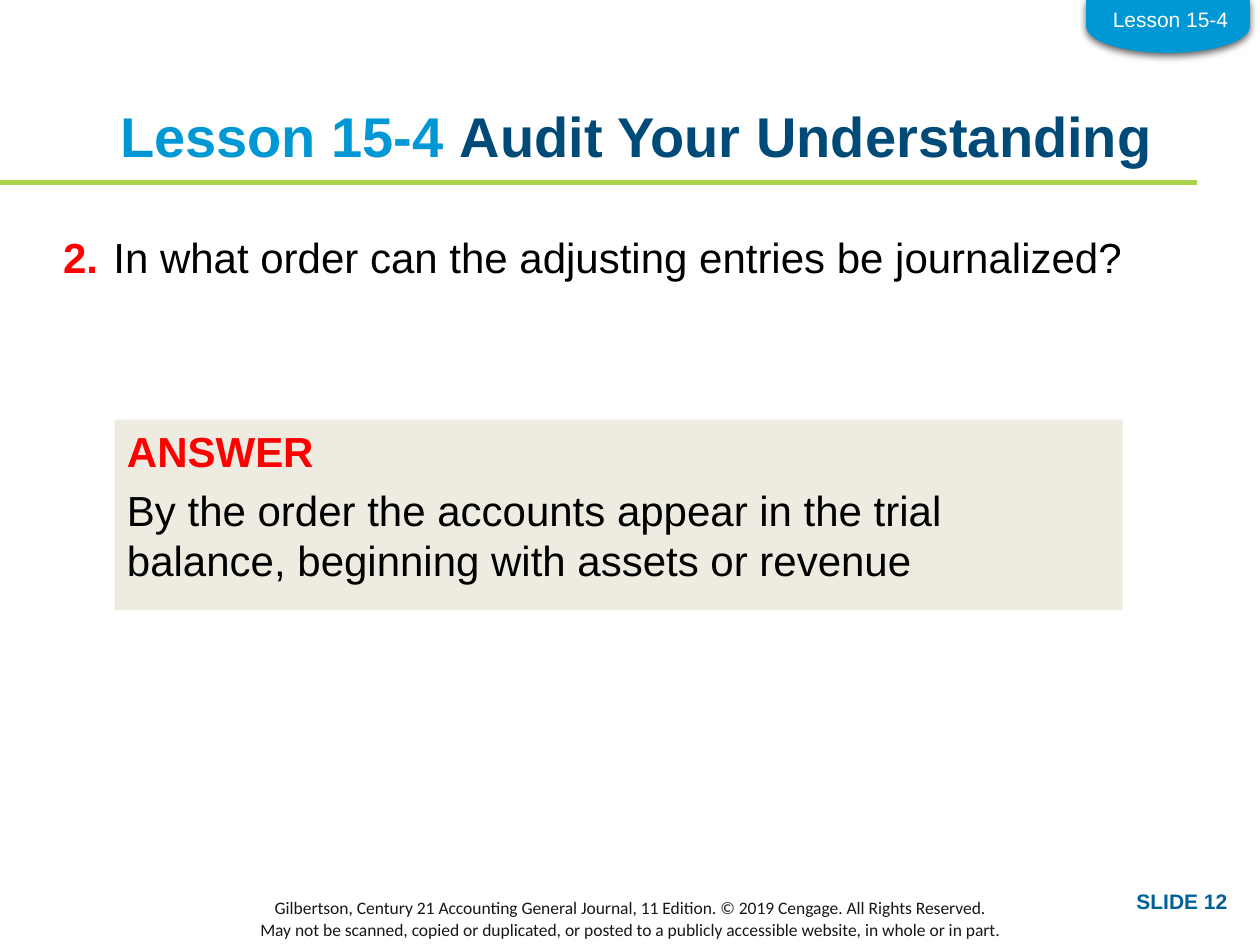
from dataclasses import dataclass

from lxml import etree
from pptx import Presentation
from pptx.dml.color import RGBColor
from pptx.enum import shapes, text
from pptx.oxml.ns import qn
from pptx.util import Inches, Pt

LEFT, CENTER, RIGHT = text.PP_ALIGN.LEFT, text.PP_ALIGN.CENTER, text.PP_ALIGN.RIGHT


@dataclass(frozen=True)
class Theme:
    font: str = "Arial"
    footer_font: str = "Calibri"
    sky: str = "0098D4"
    navy: str = "004A78"
    blue: str = "006198"
    green: str = "AAD24B"
    red: str = "FF0000"
    black: str = "000000"
    white: str = "FFFFFF"
    ink: str = "181717"
    beige: str = "EEECE1"
    title: int = 32
    body: int = 24
    label: int = 12
    footer: int = 10


class LessonSlide:
    def __init__(self, slide, theme):
        self.slide = slide
        self.theme = theme

    def rule(self, start, end, color, width):
        line = self.slide.shapes.add_connector(
            shapes.MSO_CONNECTOR.STRAIGHT, *map(Inches, start + end))
        line.line.color.rgb = RGBColor.from_string(color)
        line.line.width = Pt(width)
        etree.SubElement(line._element.spPr, qn("a:effectLst"))

    def panel(self, kind, box, color):
        panel = self.slide.shapes.add_shape(kind, *map(Inches, box))
        panel.shadow.inherit = False
        panel.fill.solid()
        panel.fill.fore_color.rgb = RGBColor.from_string(color)
        panel.line.fill.background()
        return panel

    def tab(self, box):
        """Draw the rounded corner tab, hanging down with a soft shadow."""
        tab = self.panel(shapes.MSO_SHAPE.FLOWCHART_DELAY, box, self.theme.sky)
        tab.rotation = 90
        effects = tab._element.spPr.find(qn("a:effectLst"))
        shadow = etree.SubElement(
            effects, qn("a:outerShdw"), blurRad=str(Pt(4.5)), dist=str(Pt(1.5)),
            dir="5400000", rotWithShape="0")
        color = etree.SubElement(shadow, qn("a:srgbClr"), val=self.theme.black)
        etree.SubElement(color, qn("a:alpha"), val="63000")

    def textbox(self, box, paragraphs, size, inset=True, wrap=True,
                anchor=text.MSO_ANCHOR.TOP, **style):
        frame = self.slide.shapes.add_textbox(*map(Inches, box)).text_frame
        frame.word_wrap = wrap
        frame.vertical_anchor = anchor
        if not inset:
            frame.margin_left = frame.margin_right = 0
            frame.margin_top = frame.margin_bottom = 0
        return self.fill_text(frame, paragraphs, size, **style)

    def fill_text(self, frame, paragraphs, size, align=LEFT, font=None):
        """Fill a frame; each paragraph is a list of (words, color, bold)."""
        frame.text = "\n".join("" for _ in paragraphs)
        for paragraph, parts in zip(frame.paragraphs, paragraphs):
            paragraph.alignment = align
            for words, color, bold in parts:
                run = paragraph.add_run()
                run.text = words
                run.font.name = font or self.theme.font
                run.font.size = Pt(size)
                run.font.bold = bold
                run.font.color.rgb = RGBColor.from_string(color)
        return frame


def main():
    deck = Presentation()
    deck.slide_width, deck.slide_height = Inches(10), Inches(7.5)
    theme = Theme()
    page = LessonSlide(deck.slides.add_slide(deck.slide_layouts[6]), theme)

    page.rule((0, 1.45), (9.5, 1.45), theme.green, 3)
    notice = (
        "Gilbertson, Century 21 Accounting General Journal, 11 Edition. "
        "© 2019 Cengage. All Rights Reserved.",
        "May not be scanned, copied or duplicated, or posted to a publicly "
        "accessible website, in whole or in part.",
    )
    page.textbox((0, 7.14, 10, 0.3), [[(line, theme.ink, False)] for line in notice],
                 theme.footer, anchor=text.MSO_ANCHOR.MIDDLE, align=CENTER,
                 font=theme.footer_font)

    page.textbox((0.52, 0.81, 9.06, 0.74),
                 [[("Lesson 15-4 ", theme.sky, True),
                   ("Audit Your Understanding", theme.navy, True)]],
                 theme.title, inset=False, align=CENTER)

    question = page.textbox(
        (0.5, 1.88, 8.79, 0.92),
        [[("2.\t", theme.red, True),
          ("In what order can the adjusting entries be journalized?", theme.black, False)]],
        theme.body, inset=False).paragraphs[0]
    question.line_spacing = 0.9
    hanging = question._p.get_or_add_pPr()
    hanging.set("marL", str(Inches(0.4)))
    hanging.set("indent", str(Inches(-0.4)))

    answer = page.panel(shapes.MSO_SHAPE.RECTANGLE, (0.91, 3.33, 8, 1.51),
                        theme.beige).text_frame
    answer.word_wrap = True
    answer.vertical_anchor = text.MSO_ANCHOR.TOP
    page.fill_text(answer,
                   [[("ANSWER", theme.red, True)],
                    [("By the order the accounts appear in the trial balance, "
                      "beginning with assets or revenue", theme.black, False)]],
                   theme.body)
    answer.paragraphs[1].space_before = Pt(0.2 * theme.body)

    page.textbox((7.84, 7, 2, 0.3), [[("SLIDE 12", theme.blue, True)]],
                 theme.label, align=RIGHT)
    page.tab((9.06, -0.44, 0.42, 1.3))
    page.textbox((8.73, 0, 1.12, 0.3), [[("Lesson 15-4", theme.white, False)]],
                 theme.label, wrap=False, align=CENTER)

    deck.save("out.pptx")


if __name__ == "__main__":
    main()
